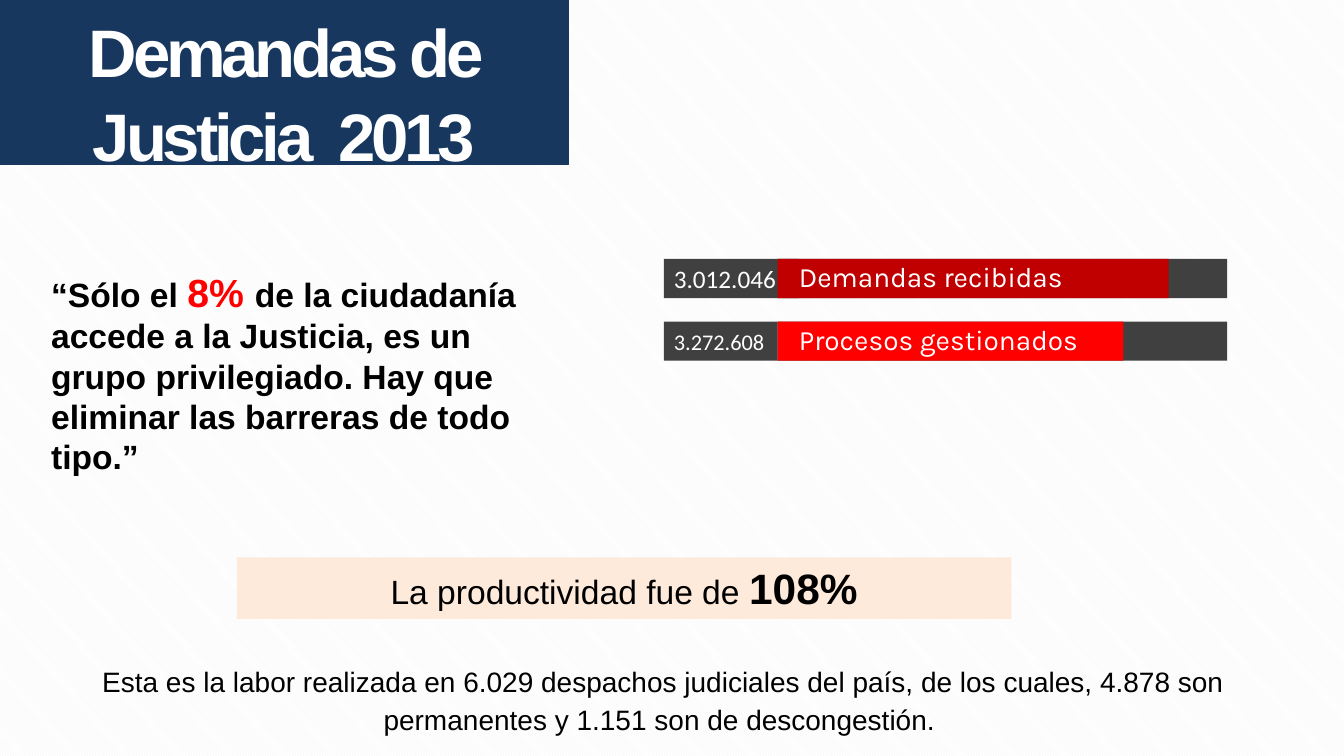
from pptx import Presentation
from pptx import util as u
from pptx.dml.color import RGBColor
from pptx.enum import dml, shapes, text

Pt = u.Pt
COLORS = {
    "navy": "17375E", "track": "404040", "crimson": "C00000", "red": "FF0000",
    "peach": "FDEADA", "white": "FFFFFF", "stripe": "F2F2F2", "black": "000000",
}
LEFT, CENTER = text.PP_ALIGN.LEFT, text.PP_ALIGN.CENTER
TOP, MIDDLE = text.MSO_ANCHOR.TOP, text.MSO_ANCHOR.MIDDLE
INSETS = (7.2, 3.6, 7.2, 3.6)


def rgb(name):
    return RGBColor.from_string(COLORS[name])


def add_box(slide, left, top, width, height, fill):
    box = slide.shapes.add_shape(
        shapes.MSO_SHAPE.RECTANGLE, Pt(left), Pt(top), Pt(width), Pt(height))
    box.shadow.inherit = False
    box.fill.solid()
    box.fill.fore_color.rgb = rgb(fill)
    box.line.fill.background()
    return box


def add_label(slide, left, top, width, height):
    return slide.shapes.add_textbox(Pt(left), Pt(top), Pt(width), Pt(height))


def write(shape, runs, size, color="black", font="Arial", bold=False,
          align=LEFT, anchor=TOP, insets=INSETS, spacing=None):
    """Fill a shape with one paragraph; each run is (wording, font overrides)."""
    frame = shape.text_frame
    frame.word_wrap = True
    frame.vertical_anchor = anchor
    (frame.margin_left, frame.margin_top,
     frame.margin_right, frame.margin_bottom) = map(Pt, insets)
    paragraph = frame.paragraphs[0]
    paragraph.alignment = align
    paragraph.line_spacing = spacing
    paragraph.font.name = font
    paragraph.font.size = Pt(size)
    paragraph.font.bold = bold
    paragraph.font.color.rgb = rgb(color)
    for wording, overrides in runs:
        run = paragraph.add_run()
        run.text = wording
        if "size" in overrides:
            run.font.size = Pt(overrides["size"])
        if "bold" in overrides:
            run.font.bold = overrides["bold"]
        if "color" in overrides:
            run.font.color.rgb = rgb(overrides["color"])
    return paragraph


def add_title(slide):
    title = add_box(slide, 0, -0.7, 406, 118, "navy")
    title.line.color.rgb = rgb("navy")
    title.line.width = Pt(0.75)
    paragraph = write(title, [("Demandas de Justicia  2013", {})], 48, "white",
                      bold=True, align=CENTER, insets=(9.4, 5, 9.4, 5), spacing=1.05)
    # Letter spacing of -3 pt
    paragraph.runs[0].font._element.set("spc", "-300")


def add_bar(slide, top, figure, figure_size, figure_width, caption, width, color):
    bar_left, height = 555.8, 28
    add_box(slide, bar_left, top, 321.2, height, "track")
    figure_box = add_box(slide, 474.5, top, figure_width, height, "track")
    write(figure_box, [(figure, {})], figure_size, "white", "Calibri", anchor=MIDDLE)
    bar = add_box(slide, bar_left, top, width, height, color)
    write(bar, [(caption, {})], 20, "white", "Karla", anchor=MIDDLE,
          insets=(15.1, 1.4, 12.2, 1.4), spacing=0.9)


def main():
    deck = Presentation()
    deck.slide_width, deck.slide_height = Pt(960.5), Pt(540)
    slide = deck.slides.add_slide(deck.slide_layouts[6])

    # Striped background
    backdrop = slide.background.fill
    backdrop.patterned()
    backdrop.pattern = dml.MSO_PATTERN.LIGHT_DOWNWARD_DIAGONAL
    backdrop.fore_color.rgb = rgb("stripe")
    backdrop.back_color.rgb = rgb("white")

    add_title(slide)

    # Cases received and handled
    add_bar(slide, 185, "3.012.046", 18, 96.5, "Demandas recibidas", 279.4, "crimson")
    add_bar(slide, 229.7, "3.272.608", 16, 81.3, "Procesos gestionados", 247, "red")

    # Quotation
    write(add_label(slide, 29.5, 188, 385, 157.7), [
        ("“Sólo el ", {}),
        ("8% ", {"size": 28, "color": "red"}),
        ("de la ciudadanía accede a la Justicia, es un grupo privilegiado. "
         "Hay que eliminar las barreras de todo tipo.”", {}),
    ], 24, bold=True)

    # Productivity banner
    write(add_box(slide, 169.2, 398.2, 553.7, 43.9, "peach"), [
        ("La productividad fue de ", {}),
        ("108%", {"size": 30.3, "bold": True}),
    ], 24, align=CENTER)

    # Closing note
    write(add_label(slide, 21.6, 467.3, 905, 63.4), [
        ("Esta es la labor realizada en 6.029 despachos judiciales del país, de los "
         "cuales, 4.878 son permanentes y 1.151 son de descongestión. ", {}),
    ], 20, align=CENTER, spacing=1.15)

    deck.save("out.pptx")


if __name__ == "__main__":
    main()
